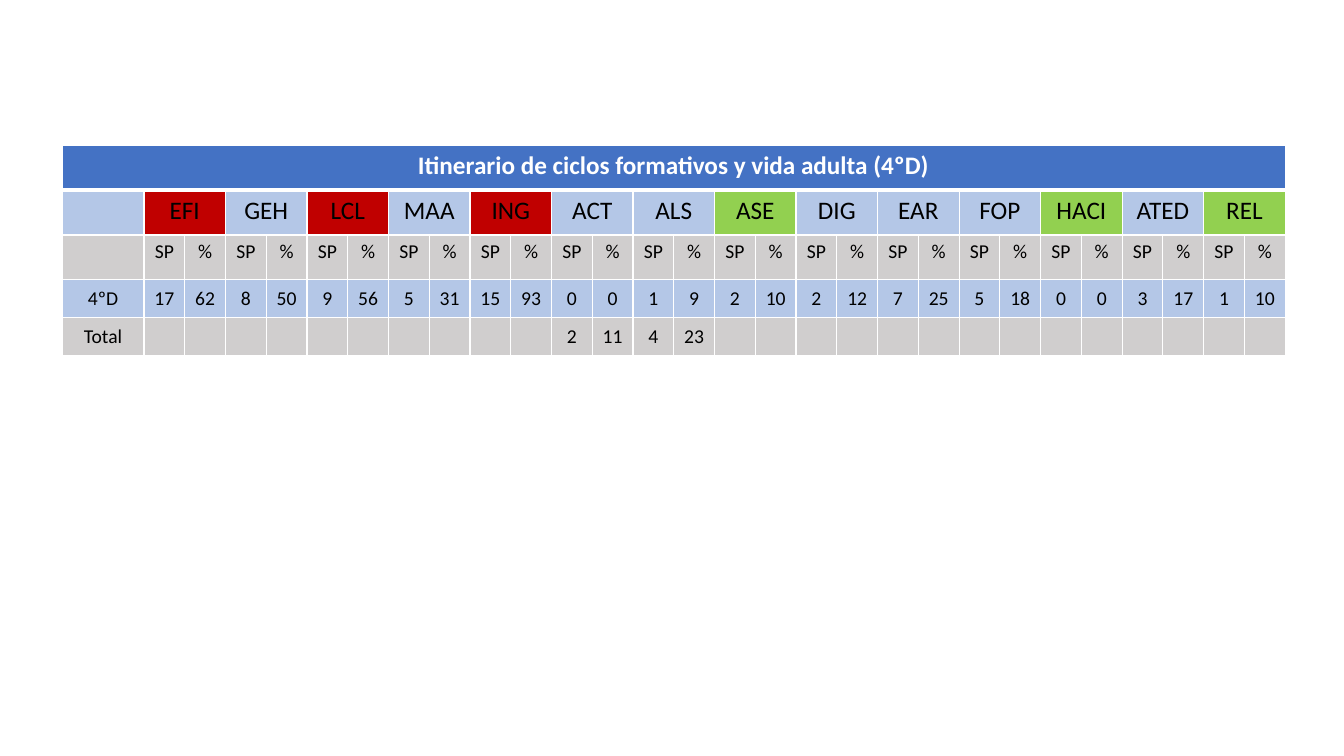
from lxml import etree
from pptx import Presentation
from pptx.dml.color import RGBColor
from pptx.enum.text import MSO_ANCHOR, PP_ALIGN
from pptx.oxml.ns import qn
from pptx.util import Pt

PX = 914400 / 100.8
CENTER = PP_ALIGN.CENTER
TOP, MIDDLE = MSO_ANCHOR.TOP, MSO_ANCHOR.MIDDLE
WHITE, BLACK = "FFFFFF", "000000"
NAVY, BLUE, GRAY = "4472C4", "B4C7E7", "D0CECE"
RED, GREEN = "C00000", "92D050"


def px(n):
    return round(n * PX)


def rgb(code):
    return RGBColor.from_string(code)


# Content
title = "Itinerario de ciclos formativos y vida adulta (4ºD)"
areas = "EFI GEH LCL MAA ING ACT ALS ASE DIG EAR FOP HACI ATED REL".split()
marks = {"EFI": RED, "LCL": RED, "ING": RED,
         "ASE": GREEN, "HACI": GREEN, "REL": GREEN}
scores = [(17, 62), (8, 50), (9, 56), (5, 31), (15, 93), (0, 0), (1, 9),
          (2, 10), (2, 12), (7, 25), (5, 18), (0, 0), (3, 17), (1, 10)]
totals = {"ACT": (2, 11), "ALS": (4, 23)}

count = 1 + 2 * len(areas)
rows = [[title] + [""] * (count - 1), [""], [""], ["4ºD"], ["Total"]]
for area, score in zip(areas, scores):
    rows[1] += [area, ""]
    rows[2] += ["SP", "%"]
    rows[3] += score
    rows[4] += totals.get(area, ("", ""))

# Row looks: height, fill, text size, anchor
looks = [(45, NAVY, 18, TOP), (45, BLUE, 18, TOP), (45, GRAY, 14, TOP),
         (38, BLUE, 14, MIDDLE), (38, GRAY, 14, MIDDLE)]

# Slide
deck = Presentation()
deck.slide_width, deck.slide_height = px(1344), px(756)
slide = deck.slides.add_slide(deck.slide_layouts[6])

# Table frame
wide, first = 1224, 82
high = sum(look[0] for look in looks)
table = slide.shapes.add_table(len(rows), count, px(62), px(145),
                               px(wide), px(high)).table
table.first_row = table.horz_banding = False
for c, col in enumerate(table.columns):
    col.width = px((wide - first) / (count - 1)) if c else px(first)

# Merged title and area heads
table.cell(0, 0).merge(table.cell(0, count - 1))
for c in range(1, count, 2):
    table.cell(1, c).merge(table.cell(1, c + 1))

# Cells
for r, (row, look) in enumerate(zip(rows, looks)):
    tall, fill, size, anchor = look
    table.rows[r].height = px(tall)
    for c, text in enumerate(row):
        cell = table.cell(r, c)
        cell.vertical_anchor = anchor

        # White borders, thicker below the title
        props = cell._tc.get_or_add_tcPr()
        for side in "LRTB":
            thick = (r, side) in ((0, "B"), (1, "T"))
            line = etree.SubElement(props, qn("a:ln" + side),
                                    w=str(Pt(3 if thick else 1)))
            solid = etree.SubElement(line, qn("a:solidFill"))
            etree.SubElement(solid, qn("a:srgbClr"), val=WHITE)

        cell.fill.solid()
        cell.fill.fore_color.rgb = rgb(marks.get(text, fill))

        para = cell.text_frame.paragraphs[0]
        para.alignment = CENTER
        if text == "":
            # Keeps empty cells from stretching the row
            etree.SubElement(para._p, qn("a:endParaRPr"), sz=str(size * 100))
            continue
        run = para.add_run()
        run.text = str(text)
        run.font.name = "Calibri"
        run.font.size = Pt(size)
        run.font.bold = r == 0
        run.font.color.rgb = rgb(BLACK if r else WHITE)

deck.save("out.pptx")
